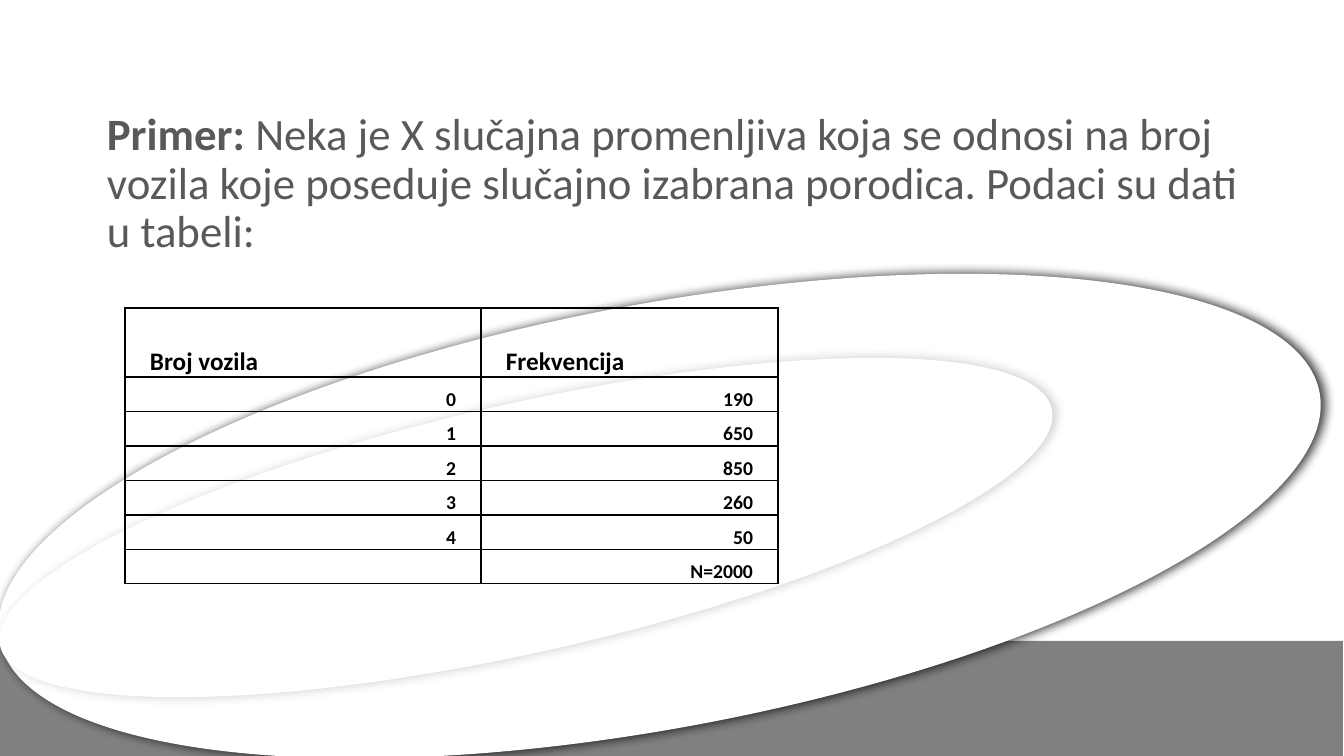
import pptx
import pptx.util
import pptx.dml.color
import pptx.enum.shapes
import pptx.enum.text
import pptx.oxml
import pptx.oxml.ns

HEX = {"ink": "000000", "text": "595959", "band": "808080", "paper": "FFFFFF"}
FONT = "Calibri"
LEAD = "Primer:"
BODY = (" Neka je X slučajna promenljiva koja se odnosi na broj vozila koje "
        "poseduje slučajno izabrana porodica. Podaci su dati u tabeli:")
ROWS = [("Broj vozila", "Frekvencija"), ("0", "190"), ("1", "650"),
        ("2", "850"), ("3", "260"), ("4", "50"), ("", "N=2000")]
BAND = (-1, 641, 1344, 122)
CURVES = [((-12, 304, 1343, 424), 169.4, 79), ((-13, 403, 1078, 249), 167.3, 19)]
INTRO = (97, 107, 1159, 563)
GRID = (125, 308, 653, 276)
COLS = (356, 297)
HEAD = 69
INSET = 25
SCALE = 914400 / 100.8
NS = pptx.oxml.ns.nsdecls("a")


def px(n):
    return pptx.util.Emu(round(n * SCALE))


def box(place):
    return [px(n) for n in place]


def rgb(key):
    return pptx.dml.color.RGBColor.from_string(HEX[key])


def style(run, size, key, bold):
    run.font.name = FONT
    run.font.size = pptx.util.Pt(size)
    run.font.bold = bold
    run.font.color.rgb = rgb(key)


def draw(slide, kind, place, key):
    shape = slide.shapes.add_shape(kind, *box(place))
    shape.shadow.inherit = False
    shape.fill.solid()
    shape.fill.fore_color.rgb = rgb(key)
    shape.line.fill.background()
    return shape


def shade(shape, alpha):
    glow = pptx.oxml.parse_xml(
        f'<a:outerShdw {NS} blurRad="101600" dist="38100" dir="0">'
        f'<a:srgbClr val="{HEX["ink"]}"><a:alpha val="{alpha * 1000}"/></a:srgbClr>'
        '</a:outerShdw>')
    shape._element.spPr.find(pptx.oxml.ns.qn("a:effectLst")).append(glow)


def edge(cell):
    props = cell._tc.get_or_add_tcPr()
    for place, side in enumerate(("lnL", "lnR", "lnT", "lnB")):
        props.insert(place, pptx.oxml.parse_xml(
            f'<a:{side} {NS} w="12700"><a:solidFill>'
            f'<a:srgbClr val="{HEX["ink"]}"/></a:solidFill></a:{side}>'))


def backdrop(slide):
    kinds = pptx.enum.shapes.MSO_SHAPE
    draw(slide, kinds.RECTANGLE, BAND, "band")
    for place, turn, alpha in CURVES:
        curve = draw(slide, kinds.OVAL, place, "paper")
        curve.rotation = turn
        curve._element.spPr.xfrm.set("flipH", "1")
        shade(curve, alpha)


def intro(slide):
    frame = slide.shapes.add_textbox(*box(INTRO)).text_frame
    frame.word_wrap = True
    para = frame.paragraphs[0]
    para.line_spacing = 0.9
    for text, bold in ((LEAD, True), (BODY, False)):
        run = para.add_run()
        run.text = text
        style(run, 32, "text", bold)


def grid(slide):
    table = slide.shapes.add_table(len(ROWS), len(COLS), *box(GRID)).table
    table.first_row = table.horz_banding = False
    for col, width in zip(table.columns, COLS):
        col.width = px(width)
    step = (GRID[3] - HEAD) / (len(ROWS) - 1)
    for r, words in enumerate(ROWS):
        table.rows[r].height = px(step if r else HEAD)
        for c, word in enumerate(words):
            cell = table.cell(r, c)
            cell.fill.background()
            cell.margin_left = cell.margin_right = px(INSET)
            cell.margin_top = cell.margin_bottom = 0
            cell.vertical_anchor = pptx.enum.text.MSO_ANCHOR.BOTTOM
            edge(cell)
            cell.text_frame.text = word
            para = cell.text_frame.paragraphs[0]
            para.line_spacing = 1.15
            if r:
                para.alignment = pptx.enum.text.PP_ALIGN.RIGHT
            for run in para.runs:
                style(run, 14 if r else 18, "ink", True)


def main():
    deck = pptx.Presentation()
    deck.slide_width, deck.slide_height = px(1344), px(756)
    slide = deck.slides.add_slide(deck.slide_layouts[6])
    backdrop(slide)
    intro(slide)
    grid(slide)
    deck.save("out.pptx")


if __name__ == "__main__":
    main()
